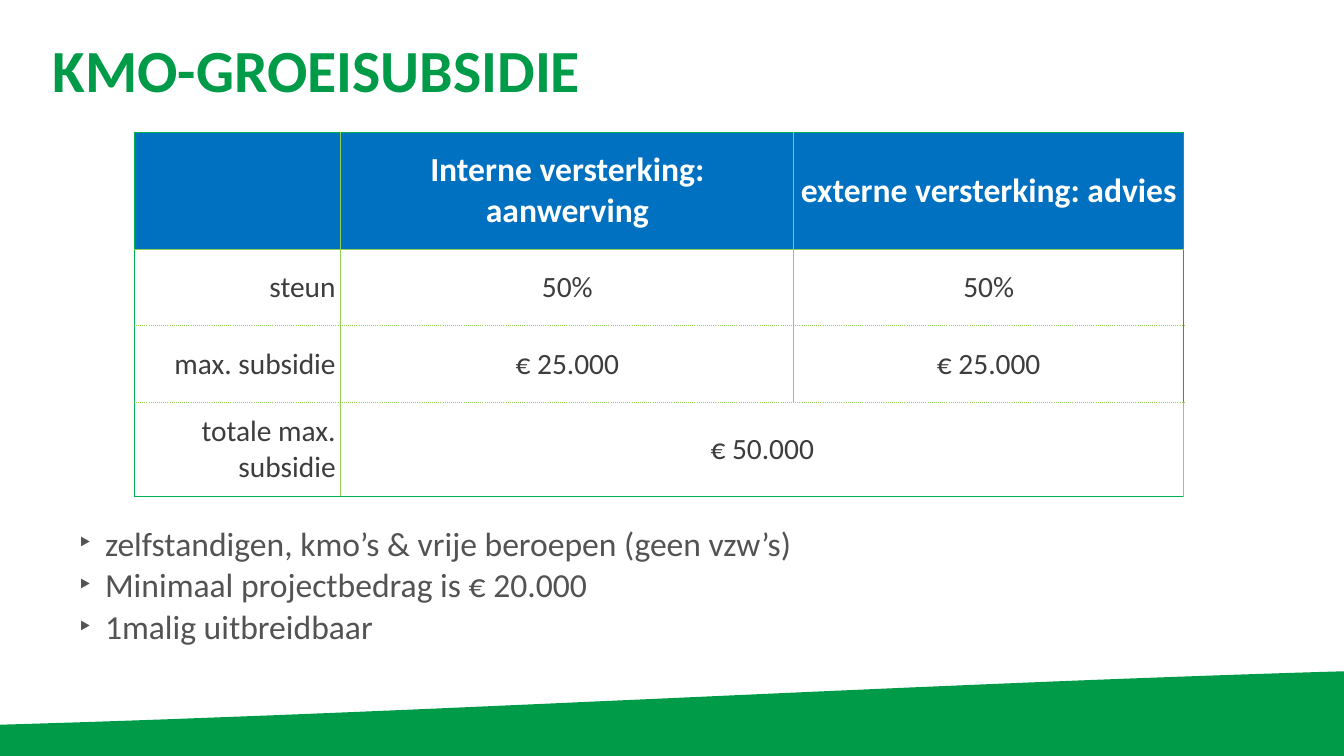
from dataclasses import dataclass

from lxml.etree import SubElement
from pptx import Presentation
from pptx.dml.color import RGBColor
from pptx.enum.text import MSO_ANCHOR, PP_ALIGN
from pptx.oxml.ns import qn
from pptx.slide import Slide
from pptx.table import _Cell as Cell
from pptx.text.text import Font, TextFrame, _Paragraph as Paragraph
from pptx.util import Pt


@dataclass(frozen=True)
class Theme:
    font: str = "Calibri"
    green: str = "009B48"
    header_fill: str = "0070C0"
    header_text: str = "FFFFFF"
    table_text: str = "3C3D3C"
    bullet_text: str = "535353"
    outer_border: str = "00B050"
    inner_border: str = "92D050"
    title_size: float = 42.7
    header_size: float = 24
    table_size: float = 21
    bullet_size: float = 24


@dataclass(frozen=True)
class Box:
    left: float
    top: float
    width: float
    height: float

    def lengths(self) -> tuple[Pt, Pt, Pt, Pt]:
        return Pt(self.left), Pt(self.top), Pt(self.width), Pt(self.height)


@dataclass(frozen=True)
class Border:
    tag: str
    color: str
    dash: str = "solid"


THEME = Theme()
SLIDE_WIDTH, SLIDE_HEIGHT = 960, 540
TITLE_BOX = Box(37.5, 37.5, 840, 57)
BULLET_BOX = Box(37.5, 376.5, 840, 86.5)
TABLE_BOX = Box(96, 94.5, 749.5, 260)
COLUMN_WIDTHS = (147.5, 323.5, 278.5)
ROW_HEIGHTS = (83.5, 54.5, 55, 67)
WAVE_CONTROLS = ((0, 517.7), (322, 508.3), (638.5, 489), (960, 479.5))
WAVE_STEPS = 40

TABLE_ROWS = (
    ("", "Interne versterking: aanwerving", "externe versterking: advies"),
    ("steun", "50%", "50%"),
    ("max. subsidie", "€ 25.000", "€ 25.000"),
    ("totale max. subsidie", "€ 50.000", ""),
)
BULLETS = (
    "zelfstandigen, kmo’s & vrije beroepen (geen vzw’s)",
    "Minimaal projectbedrag is € 20.000",
    "1malig uitbreidbaar",
)


def style_font(font: Font, size: float, color: str, bold: bool = False) -> None:
    font.name = THEME.font
    font.size = Pt(size)
    font.bold = bold
    font.color.rgb = RGBColor.from_string(color)


def add_wave(slide: Slide) -> None:
    """Draw the footer band whose upper edge is a cubic Bézier curve."""
    edge = []
    for step in range(WAVE_STEPS + 1):
        t = step / WAVE_STEPS
        weights = ((1 - t) ** 3, 3 * t * (1 - t) ** 2, 3 * t**2 * (1 - t), t**3)
        edge.append(tuple(
            Pt(sum(weight * point[axis] for weight, point in zip(weights, WAVE_CONTROLS)))
            for axis in (0, 1)
        ))
    corners = [(Pt(SLIDE_WIDTH), Pt(SLIDE_HEIGHT)), (Pt(0), Pt(SLIDE_HEIGHT))]
    builder = slide.shapes.build_freeform(*edge[0])
    builder.add_line_segments(edge[1:] + corners, close=True)
    wave = builder.convert_to_shape()
    wave.shadow.inherit = False
    wave.fill.solid()
    wave.fill.fore_color.rgb = RGBColor.from_string(THEME.green)
    wave.line.fill.background()


def add_text_frame(slide: Slide, box: Box) -> TextFrame:
    frame = slide.shapes.add_textbox(*box.lengths()).text_frame
    frame.word_wrap = True
    frame.margin_left = frame.margin_right = frame.margin_top = frame.margin_bottom = 0
    return frame


def add_title(slide: Slide) -> None:
    paragraph = add_text_frame(slide, TITLE_BOX).paragraphs[0]
    paragraph.text = "KMO-GROEISUBSIDIE"
    paragraph.line_spacing = 0.7
    style_font(paragraph.font, THEME.title_size, THEME.green, bold=True)


def set_bullet(paragraph: Paragraph) -> None:
    properties = paragraph._p.get_or_add_pPr()
    properties.set("marL", str(Pt(37.5)))
    properties.set("indent", str(-Pt(18.75)))
    SubElement(properties, qn("a:buFont"), typeface=THEME.font)
    SubElement(properties, qn("a:buChar"), char="‣")


def add_bullets(slide: Slide) -> None:
    frame = add_text_frame(slide, BULLET_BOX)
    for index, text in enumerate(BULLETS):
        paragraph = frame.add_paragraph() if index else frame.paragraphs[0]
        paragraph.text = text
        set_bullet(paragraph)
        paragraph.line_spacing = 0.9
        if index:
            paragraph.space_before = Pt(4)
        style_font(paragraph.font, THEME.bullet_size, THEME.bullet_text)


def cell_borders(row: int, column: int) -> tuple[Border, ...]:
    """Outer edges are dark green; rules between body rows are dotted."""
    last_row, last_column = len(ROW_HEIGHTS) - 1, len(COLUMN_WIDTHS) - 1

    def edge_color(is_outer: bool) -> str:
        return THEME.outer_border if is_outer else THEME.inner_border

    return (
        Border("a:lnL", edge_color(column == 0)),
        Border("a:lnR", edge_color(column == last_column)),
        Border("a:lnT", edge_color(row == 0), "sysDot" if row > 1 else "solid"),
        Border("a:lnB", edge_color(row == last_row),
               "sysDot" if 0 < row < last_row else "solid"),
    )


def draw_border(cell: Cell, border: Border) -> None:
    line = SubElement(cell._tc.get_or_add_tcPr(), qn(border.tag), w=str(Pt(1)))
    fill = SubElement(line, qn("a:solidFill"))
    SubElement(fill, qn("a:srgbClr"), val=border.color)
    SubElement(line, qn("a:prstDash"), val=border.dash)


def style_cell(cell: Cell, row: int, column: int) -> None:
    for border in cell_borders(row, column):
        draw_border(cell, border)
    cell.vertical_anchor = MSO_ANCHOR.MIDDLE
    cell.margin_left = cell.margin_right = cell.margin_top = cell.margin_bottom = Pt(3.75)
    paragraph = cell.text_frame.paragraphs[0]
    paragraph.alignment = PP_ALIGN.CENTER if column else PP_ALIGN.RIGHT
    if row == 0:
        cell.fill.solid()
        cell.fill.fore_color.rgb = RGBColor.from_string(THEME.header_fill)
        style_font(paragraph.font, THEME.header_size, THEME.header_text, bold=True)
    else:
        cell.fill.background()
        style_font(paragraph.font, THEME.table_size, THEME.table_text)


def add_subsidy_table(slide: Slide) -> None:
    table = slide.shapes.add_table(
        len(ROW_HEIGHTS), len(COLUMN_WIDTHS), *TABLE_BOX.lengths()
    ).table
    table.first_row = table.horz_banding = False
    for column, width in zip(table.columns, COLUMN_WIDTHS):
        column.width = Pt(width)
    for row, height in zip(table.rows, ROW_HEIGHTS):
        row.height = Pt(height)
    for row, texts in enumerate(TABLE_ROWS):
        for column, text in enumerate(texts):
            cell = table.cell(row, column)
            cell.text = text
            style_cell(cell, row, column)
    table.cell(3, 1).merge(table.cell(3, 2))


def main() -> None:
    presentation = Presentation()
    presentation.slide_width = Pt(SLIDE_WIDTH)
    presentation.slide_height = Pt(SLIDE_HEIGHT)
    slide = presentation.slides.add_slide(presentation.slide_layouts[6])
    add_wave(slide)
    add_bullets(slide)
    add_title(slide)
    add_subsidy_table(slide)
    presentation.save("out.pptx")


if __name__ == "__main__":
    main()
